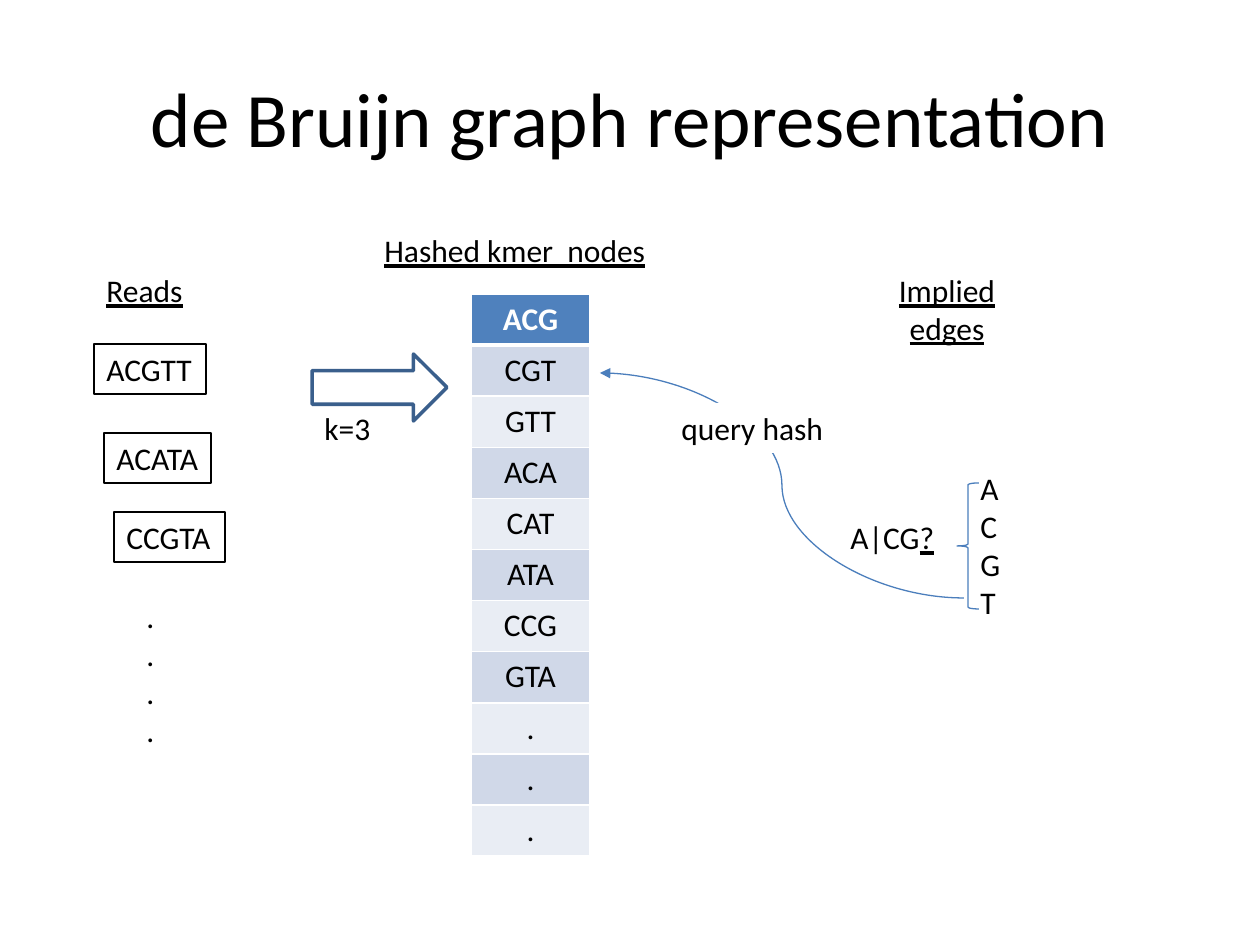
from lxml import etree
from pptx import Presentation
from pptx.dml.color import RGBColor
from pptx.enum.shapes import MSO_CONNECTOR, MSO_SHAPE
from pptx.enum.text import MSO_ANCHOR, MSO_AUTO_SIZE, PP_ALIGN
from pptx.oxml.ns import qn
from pptx.util import Emu, Pt

CURVE = MSO_CONNECTOR.CURVE
ARROW, BRACE = MSO_SHAPE.RIGHT_ARROW, MSO_SHAPE.LEFT_BRACE
TOP, MIDDLE = MSO_ANCHOR.TOP, MSO_ANCHOR.MIDDLE
GROW = MSO_AUTO_SIZE.SHAPE_TO_FIT_TEXT
LEFT, CENTER = PP_ALIGN.LEFT, PP_ALIGN.CENTER

BLACK = RGBColor(0x00, 0x00, 0x00)
WHITE = RGBColor(0xFF, 0xFF, 0xFF)
HEAD = RGBColor(0x4F, 0x81, 0xBD)
DARK = RGBColor(0xD0, 0xD8, 0xE8)
PALE = RGBColor(0xE9, 0xED, 0xF4)
EDGE = RGBColor(0x3A, 0x5F, 0x8C)
BLUE = RGBColor(0x4B, 0x7E, 0xBC)
FONT = "Calibri"

TITLE = "de Bruijn graph representation"
KMERS = ["ACG", "CGT", "GTT", "ACA", "CAT", "ATA", "CCG", "GTA", ".", ".", "."]
READS = [
    ("ACGTT", 94, 344, 112),
    ("ACATA", 104, 433, 107),
    ("CCGTA", 114, 512, 111),
]
HEADS = [("Reads", 94, 265, 102), ("Hashed kmer  nodes", 372, 225, 290)]
BASES = "A\nC\nG\nT"
DOTS = ".\n.\n.\n."
LINE = 50


def px(n):
    return Emu(round(n * 914400 / 126))


def style(run, color=BLACK, size=18, bold=False):
    font = run.font
    font.name, font.size, font.bold = FONT, Pt(size), bold
    font.color.rgb = color


def label(text, x, y, w, h=LINE, under=False, wrap=False, align=LEFT):
    box = slide.shapes.add_textbox(px(x), px(y), px(w), px(h))
    frame = box.text_frame
    frame.text = text
    frame.word_wrap = wrap
    frame.auto_size = GROW
    for para in frame.paragraphs:
        para.alignment = align
        for run in para.runs:
            style(run)
            run.font.underline = under
    return box


def outline(shape, color, width):
    shape.line.color.rgb = color
    shape.line.width = Pt(width)


def preset(kind, x, y, w, h, color, width):
    shape = slide.shapes.add_shape(kind, px(x), px(y), px(w), px(h))
    shape.shadow.inherit = False
    shape.fill.background()
    outline(shape, color, width)


def border(cell, side, width):
    props = cell._tc.get_or_add_tcPr()
    line = etree.SubElement(props, qn("a:ln" + side), w=str(Pt(width)))
    fill = etree.SubElement(line, qn("a:solidFill"))
    etree.SubElement(fill, qn("a:srgbClr"), val=str(WHITE))


def grid(x, y, w, h):
    count = len(KMERS)
    table = slide.shapes.add_table(count, 1, px(x), px(y), px(w), px(h)).table
    for row, text in enumerate(KMERS):
        table.rows[row].height = px(h / count)
        cell = table.cell(row, 0)
        for side in "LRTB":
            thick = (row == 0 and side == "B") or (row == 1 and side == "T")
            border(cell, side, 3 if thick else 1)
        cell.fill.solid()
        cell.fill.fore_color.rgb = HEAD if row == 0 else (PALE, DARK)[row % 2]
        cell.vertical_anchor = TOP
        cell.text = text
        para = cell.text_frame.paragraphs[0]
        para.alignment = CENTER
        style(para.runs[0], WHITE if row == 0 else BLACK, bold=row == 0)


def curve(x1, y1, x2, y2):
    link = slide.shapes.add_connector(CURVE, px(x1), px(y1), px(x2), px(y2))
    outline(link, BLUE, 0.75)
    etree.SubElement(link.line._get_or_add_ln(), qn("a:headEnd"), type="triangle")
    etree.SubElement(link._element.spPr, qn("a:effectLst"))


deck = Presentation()
deck.slide_width, deck.slide_height = px(1260), px(945)
slide = deck.slides.add_slide(deck.slide_layouts[5])

title = slide.shapes.title
title.left, title.top, title.width, title.height = px(63), px(38), px(1134), px(157)
title.text_frame.text = TITLE
title.text_frame.vertical_anchor = MIDDLE
title.text_frame.paragraphs[0].alignment = CENTER
style(title.text_frame.paragraphs[0].runs[0], size=44)

grid(471, 294, 119, 554)

for text, x, y, w in HEADS:
    label(text, x, y, w, under=True)
label("Implied edges", 848, 265, 198, 89, under=True, wrap=True, align=CENTER)

query = label("A|CG", 838, 512, 110)
mark = query.text_frame.paragraphs[0].add_run()
mark.text = "?"
style(mark)
mark.font.underline = True
label(BASES, 968, 463, 45, 165)

preset(ARROW, 312, 354, 135, 67, EDGE, 2)
label("k=3", 312, 403, 72)

curve(600, 373, 964, 598)
note = label("query hash", 669, 403, 169)
note.fill.solid()
note.fill.fore_color.rgb = WHITE
preset(BRACE, 957, 483, 22, 126, BLUE, 0.75)

for text, x, y, w in READS:
    outline(label(text, x, y, w), BLACK, 0.75)
label(DOTS, 134, 591, 34, 165)

deck.save("out.pptx")
